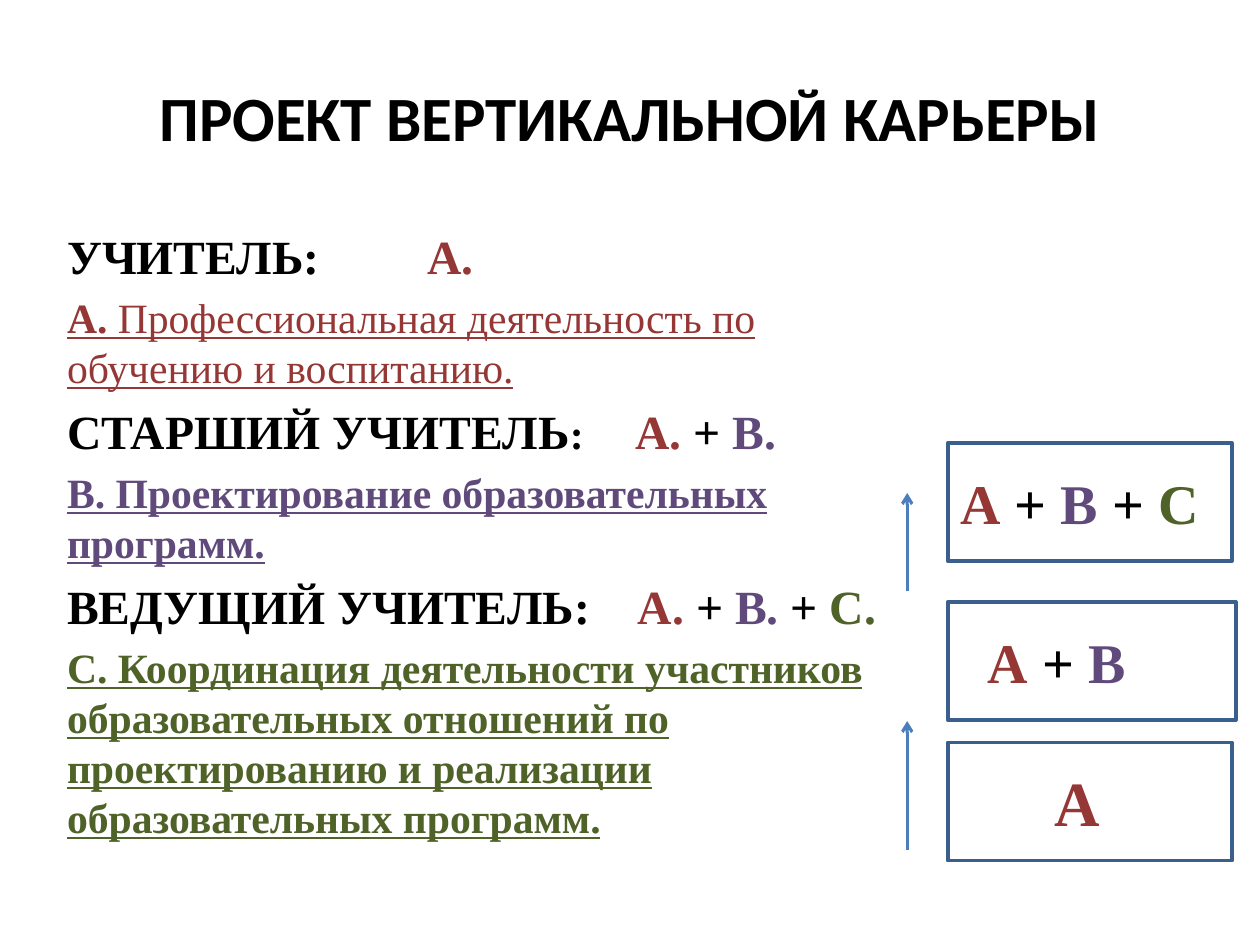
from pptx import Presentation
from pptx.dml.color import RGBColor
from pptx.enum.shapes import MSO_CONNECTOR, MSO_SHAPE
from pptx.enum.text import MSO_ANCHOR, PP_ALIGN
from pptx.oxml.ns import qn
from pptx.util import Inches, Pt
from lxml.etree import SubElement

BLACK = RGBColor(0x00, 0x00, 0x00)
WHITE = RGBColor(0xFF, 0xFF, 0xFF)
RED = RGBColor(0x95, 0x37, 0x35)
PURPLE = RGBColor(0x60, 0x4A, 0x7B)
GREEN = RGBColor(0x4F, 0x62, 0x28)
BORDER = RGBColor(0x3A, 0x5F, 0x8C)
ARROW = RGBColor(0x4B, 0x7E, 0xBC)
SERIF = "Times New Roman"
WIDE, HIGH = Inches(10), Inches(7.5)
LARGE, SMALL = 27.2, 23.8
PLUS = ("+ ", BLACK)


def part(box, left, top, wide=0, high=0):
    """Turn percent shares of a box into left, top, width and height."""
    x, y, w, h = box
    return (int(x + w * left / 100), int(y + h * top / 100),
            int(w * wide / 100), int(h * high / 100))


def write(para, text, color=BLACK, size=LARGE, font=SERIF, bold=True, line=False):
    run = para.add_run()
    run.text = text
    face = run.font
    face.name, face.size, face.bold = font, Pt(size), bold
    face.underline = line
    face.color.rgb = color


def add_title(slide, box):
    title = slide.shapes.title
    title.left, title.top, title.width, title.height = box
    frame = title.text_frame
    frame.vertical_anchor = MSO_ANCHOR.MIDDLE
    para = frame.paragraphs[0]
    para.alignment = PP_ALIGN.CENTER
    write(para, "ПРОЕКТ ВЕРТИКАЛЬНОЙ КАРЬЕРЫ", size=36, font="Calibri")


def add_rank(frame, name, colon, stop, sum_runs, duty):
    """Add a rank with its tabbed sum of duties, then the new duty."""
    first = not frame.paragraphs[0].runs
    head = frame.paragraphs[0] if first else frame.add_paragraph()
    head.space_before = Pt(3.5 if first else LARGE / 5)
    tabs = SubElement(head._p.get_or_add_pPr(), qn("a:tabLst"))
    SubElement(tabs, qn("a:tab"), pos=str(Inches(stop)), algn="l")
    write(head, name)
    write(head, ":\t", size=colon)
    for text, color in sum_runs:
        write(head, text, color)
    note = frame.add_paragraph()
    note.space_before = Pt(SMALL / 5)
    for text, bold in duty:
        write(note, text, sum_runs[-1][1], SMALL, bold=bold, line=True)


def add_ranks(slide, box):
    frame = slide.shapes.add_textbox(*box).text_frame
    frame.word_wrap = True
    add_rank(frame, "УЧИТЕЛЬ", LARGE, 2.86, [("А.", RED)],
             [("А. ", True),
              ("Профессиональная деятельность по обучению и воспитанию.", False)])
    add_rank(frame, "СТАРШИЙ УЧИТЕЛЬ", SMALL, 4.51,
             [("А. ", RED), PLUS, ("В.", PURPLE)],
             [("В. Проектирование образовательных программ.", True)])
    add_rank(frame, "ВЕДУЩИЙ УЧИТЕЛЬ", LARGE, 4.53,
             [("А. ", RED), PLUS, ("В. ", PURPLE), PLUS, ("С.", GREEN)],
             [("С. Координация деятельности участников образовательных "
               "отношений по проектированию и реализации "
               "образовательных программ.", True)])


def add_step(slide, box, runs, size, indent):
    step = slide.shapes.add_shape(MSO_SHAPE.RECTANGLE, *box)
    step.shadow.inherit = False
    step.fill.solid()
    step.fill.fore_color.rgb = WHITE
    step.line.color.rgb = BORDER
    step.line.width = Pt(2)
    frame = step.text_frame
    frame.vertical_anchor = MSO_ANCHOR.MIDDLE
    para = frame.paragraphs[0]
    para.alignment = PP_ALIGN.LEFT
    para._p.get_or_add_pPr().set("marL", str(Inches(indent)))
    for text, color in runs:
        write(para, text, color, size)


def add_arrow(slide, start, end):
    arrow = slide.shapes.add_connector(MSO_CONNECTOR.STRAIGHT, *start, *end)
    arrow.line.color.rgb = ARROW
    arrow.line.width = Pt(1.75)
    SubElement(arrow.line._get_or_add_ln(), qn("a:tailEnd"), type="arrow")
    SubElement(arrow._element.spPr, qn("a:effectLst"))


def add_ladder(slide, box):
    """Stack the three career steps, with arrows rising beside them."""
    steps = [
        (71.6, 86.7, 36, 0.75, [("А", RED)]),
        (38, 87.9, 32, 0.22, [("А ", RED), PLUS, ("В", PURPLE)]),
        (0, 86.7, 32, 0, [("А ", RED), PLUS, ("В ", PURPLE), PLUS, ("С", GREEN)]),
    ]
    for top, wide, size, indent, runs in steps:
        add_step(slide, part(box, 12.4, top, wide, 28.3), runs, size, indent)
    for low, high in ((97.3, 66.5), (35.5, 12)):
        add_arrow(slide, part(box, 0, low)[:2], part(box, 0, high)[:2])


def main():
    deck = Presentation()
    deck.slide_width, deck.slide_height = WIDE, HIGH
    slide = deck.slides.add_slide(deck.slide_layouts[5])
    page = (0, 0, WIDE, HIGH)
    add_title(slide, part(page, 5, 4, 90, 16.67))
    add_ranks(slide, part(page, 4.34, 23.33, 70.9, 65.47))
    add_ladder(slide, part(page, 72, 46.86, 26, 44.27))
    deck.save("out.pptx")


if __name__ == "__main__":
    main()
